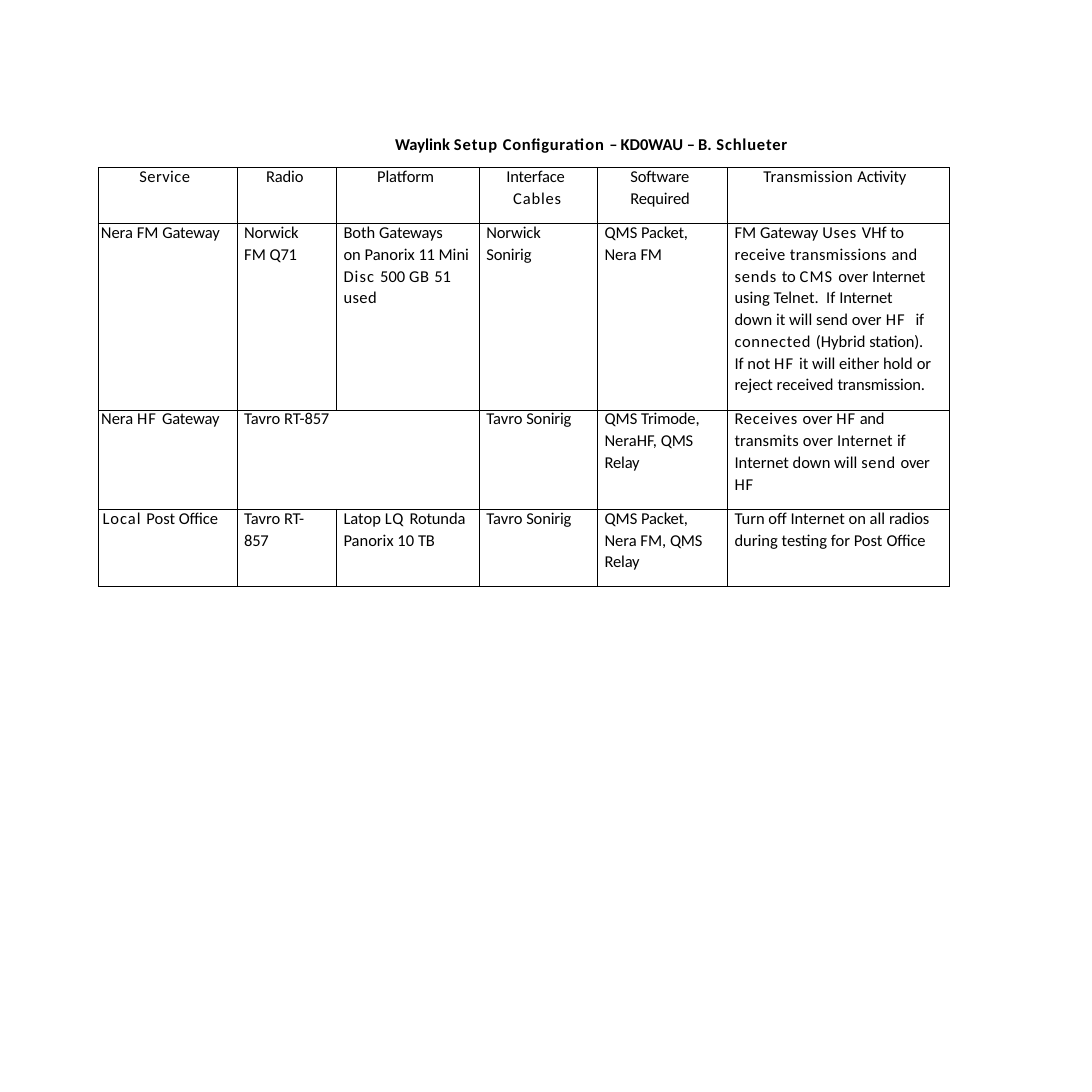
from dataclasses import dataclass

from lxml import etree
from pptx import Presentation
from pptx import util as u
from pptx.dml.color import RGBColor
from pptx.enum import text
from pptx.oxml import ns


@dataclass(frozen=True)
class Theme:
    """Colours, type and spacing shared by the whole page."""
    font: str = "Calibri"
    size: float = 12
    ink: str = "000000"
    border: float = 0.75
    first_line: float = 14.1
    next_lines: float = 1.08
    next_gap: float = 0.1


class PageBuilder:
    """Holds the theme and the current slide, and adds elements to it."""

    def __init__(self, page, theme):
        self.page = page
        self.theme = theme

    def add_spans(self, para, spans, bold=False):
        """Add runs given as plain strings or (text, letter spacing) pairs."""
        for item in spans:
            words, spacing = (item, 0) if isinstance(item, str) else item
            span = para.add_run()
            span.text = words
            span.font.name = self.theme.font
            span.font.size = u.Pt(self.theme.size)
            span.font.bold = bold
            span.font.color.rgb = RGBColor.from_string(self.theme.ink)
            if spacing:
                span._r.get_or_add_rPr().set("spc", str(round(spacing * 100)))

    def add_title(self, left, top, width, height, spans):
        """Add the bold heading above the table."""
        box = self.page.shapes.add_textbox(*map(u.Inches, (left, top, width, height)))
        frame = box.text_frame
        frame.word_wrap = True
        frame.margin_left = frame.margin_right = frame.margin_bottom = 0
        frame.margin_top = u.Inches(0.02)
        para = frame.paragraphs[0]
        para._p.get_or_add_pPr().set("marL", str(u.Inches(0.01)))
        self.add_spans(para, spans, bold=True)

    def add_borders(self, cell):
        """Draw a thin line on all four sides of a cell and clear its fill."""
        properties = cell._tc.get_or_add_tcPr()
        for side in ("a:lnL", "a:lnR", "a:lnT", "a:lnB"):
            line = etree.SubElement(properties, ns.qn(side), w=str(u.Pt(self.theme.border)))
            fill = etree.SubElement(line, ns.qn("a:solidFill"))
            etree.SubElement(fill, ns.qn("a:srgbClr"), val=self.theme.ink)
        cell.fill.background()

    def fill_cell(self, cell, lines, indents, right):
        """Write a cell's paragraphs; an indent of None centres the paragraph."""
        cell.margin_left = cell.margin_top = cell.margin_bottom = 0
        cell.margin_right = u.Inches(right)
        for index, (spans, indent) in enumerate(zip(lines, indents)):
            frame = cell.text_frame
            para = frame.add_paragraph() if index else frame.paragraphs[0]
            if indent is None:
                para.alignment = text.PP_ALIGN.CENTER
            else:
                para._p.get_or_add_pPr().set("marL", str(u.Inches(indent)))
            if index:
                para.line_spacing = self.theme.next_lines
                para.space_before = u.Pt(self.theme.next_gap)
            else:
                para.line_spacing = u.Pt(self.theme.first_line)
            self.add_spans(para, spans)

    def add_table(self, left, top, widths, heights, rows):
        """Add the bordered table; a cell of None joins the one to its left."""
        frame = self.page.shapes.add_table(
            len(heights), len(widths), u.Inches(left), u.Inches(top),
            u.Inches(sum(widths)), u.Inches(sum(heights)))
        table = frame.table
        table.first_row = table.horz_banding = False
        for column, width in zip(table.columns, widths):
            column.width = u.Inches(width)
        for row, height in zip(table.rows, heights):
            row.height = u.Inches(height)
        for r, row in enumerate(rows):
            for c, lines in enumerate(row):
                cell = table.cell(r, c)
                self.add_borders(cell)
                if lines is None:
                    table.cell(r, c - 1).merge(cell)
                elif r == 0:
                    self.fill_cell(cell, lines, HEADER_INDENTS[c], HEADER_RIGHT[c])
                else:
                    self.fill_cell(cell, lines, [BODY_INDENTS[c]] * len(lines), BODY_RIGHT[c])


COLUMN_WIDTHS = [1.4, 1, 1.44, 1.19, 1.31, 2.23]
ROW_HEIGHTS = [0.56, 1.88, 1, 0.78]
HEADER_INDENTS = [[None], [0.29], [0.41], [0.27, 0.34], [0.33, 0.33], [0.36]]
HEADER_RIGHT = [0.06, 0, 0, 0, 0, 0]
BODY_INDENTS = [None] + [0.07] * 5
BODY_RIGHT = [0.15, 0.1, 0.1, 0.1, 0.1, 0.15]

TITLE = ["Waylink ", ("Setup ", 0.7), ("Conﬁguration ", 0.5), ("– ", -0.5),
         "KD0WAU ", ("– ", -0.5), "B.", (" Schlueter", 0.6)]
GATEWAY = ("Gateway", -0.1)
PACKET = ["QMS ", ("Packet,", -0.1)]
RELAY = [("QMS ", -0.2), ("Relay", -0.1)]
TAVRO_CABLE = [["Tavro ", ("Sonirig", -0.1)]]

HEADER = [
    [[("Service", 0.3)]],
    [[("Radio", -0.1)]],
    [[("Platform", -0.1)]],
    [[("Interface", -0.1)], [("Cables", 0.6)]],
    [[("Software", -0.1)], [("Required", -0.1)]],
    [[("Transmission ", 0.2), ("Activity", -0.1)]],
]
FM_GATEWAY = [
    [["Nera FM ", GATEWAY]],
    [[("Norwick", -0.1)], ["FM ", ("Q71", -0.2)]],
    [["Both ", ("Gateways", -0.1)],
     ["on Panorix ", ("11 ", -0.2), "Mini ", ("Disc ", 0.8), "500 ",
      ("GB ", 0.5), "51 ", ("used", 0.3)]],
    [[("Norwick", -0.1)], [("Sonirig", -0.1)]],
    [PACKET, ["Nera ", ("FM", -0.2)]],
    [["FM Gateway ", ("Uses ", 0.6), "VHf ", ("to", -0.2)],
     [("receive transmissions ", 0.3), ("and ", 0.2), ("sends ", 0.6), "to ",
      ("CMS ", 0.8), "over ", ("Internet ", -0.1), "using Telnet.  If ",
      ("Internet ", -0.1), "down it will send over ", ("HF  ", 0.8), ("if ", -0.2),
      ("connected ", 0.5), "(Hybrid ", ("station). ", -0.1), "If not ", ("HF ", 0.8),
      "it will either hold ", ("or ", -0.2), "reject received ",
      ("transmission.", -0.1)]],
]
HF_GATEWAY = [
    [["Nera ", ("HF ", 0.8), GATEWAY]],
    [["Tavro RT-", ("857", -0.2)]],
    None,
    TAVRO_CABLE,
    [["QMS ", ("Trimode,", -0.1)], ["NeraHF, ", *RELAY]],
    [[("Receives ", 0.5), "over ", ("HF", 0.8), (" and", -0.2)],
     [("transmits over Internet ", 0.1), ("if ", -0.2), "Internet down will ",
      ("send ", 0.5), ("over ", -0.2), ("HF", 0.6)]],
]
POST_OFFICE = [
    [[("Local ", 0.7), "Post ", ("Office", -0.1)]],
    [["Tavro ", ("RT-", -0.2)], [("857", -0.2)]],
    [["Latop ", ("LQ ", 0.8), ("Rotunda", -0.1)], ["Panorix 10 ", ("TB", -0.2)]],
    TAVRO_CABLE,
    [PACKET, ["Nera FM, ", *RELAY]],
    [["Turn off Internet on all ", ("radios", -0.1)],
     ["during testing for Post ", ("Office", -0.1)]],
]


def main():
    """Build the deck and save it."""
    deck = Presentation()
    deck.slide_width = deck.slide_height = u.Inches(11)
    page = deck.slides.add_slide(deck.slide_layouts[6])
    builder = PageBuilder(page, Theme())
    builder.add_title(3.97, 1.33, 4.06, 0.23, TITLE)
    builder.add_table(0.99, 1.69, COLUMN_WIDTHS, ROW_HEIGHTS,
                      [HEADER, FM_GATEWAY, HF_GATEWAY, POST_OFFICE])
    deck.save("out.pptx")


if __name__ == "__main__":
    main()
